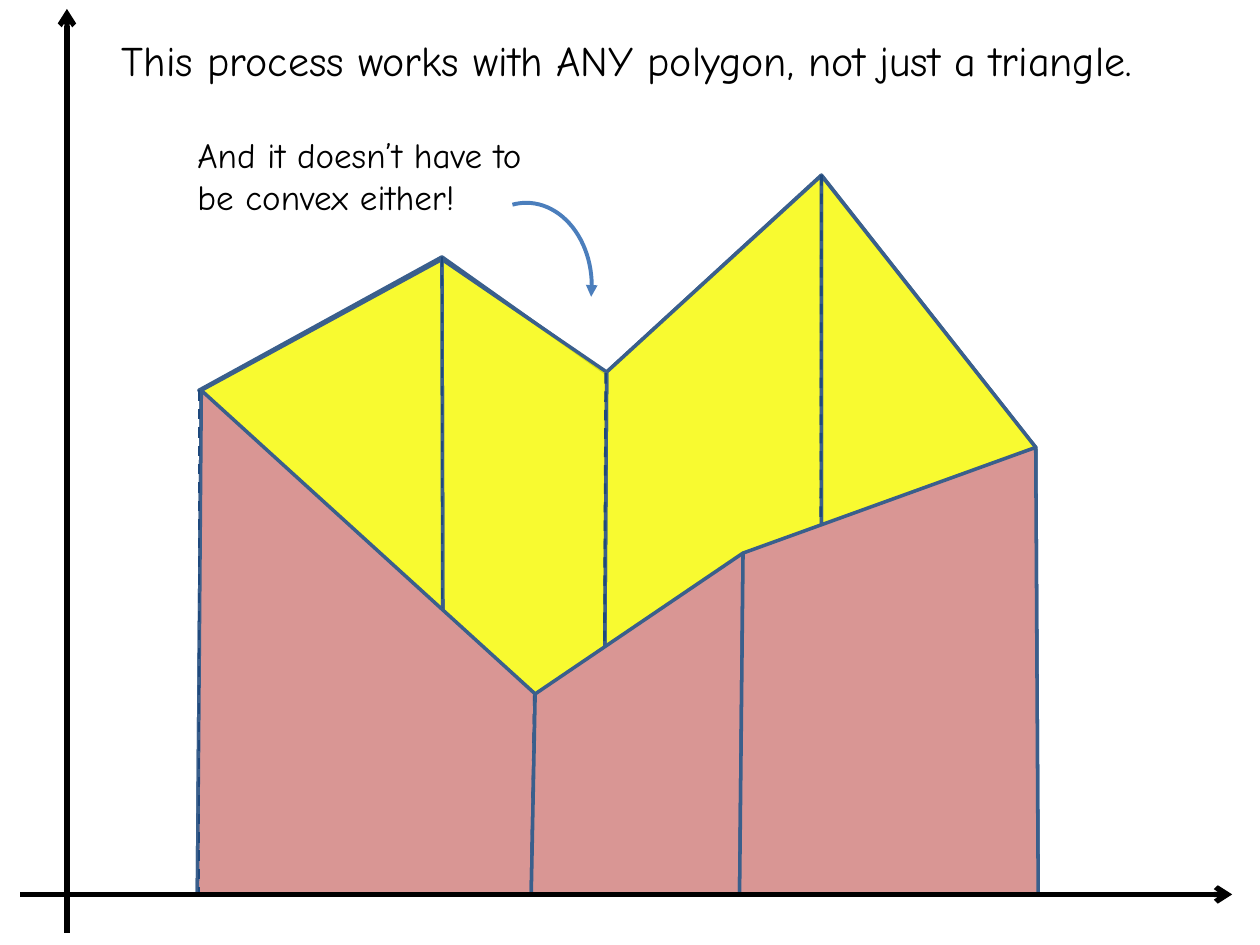
from dataclasses import dataclass
from lxml.etree import SubElement
from pptx import Presentation
from pptx.dml.color import RGBColor
from pptx.enum.dml import MSO_LINE
from pptx.enum.shapes import MSO_CONNECTOR, MSO_SHAPE
from pptx.enum.text import MSO_AUTO_SIZE
from pptx.oxml.ns import qn
from pptx.util import Cm, Pt


@dataclass(frozen=True)
class Theme:
    font: str = "Comic Neue"
    ink: str = "000000"
    edge: str = "3A5F8C"
    dash: str = "1F497D"
    arrow: str = "4B7EBC"
    polygon: str = "DCE6F2"
    upper: str = "FFFF00"
    lower: str = "D99694"
    upper_alpha: int = 80
    title_size: int = 24
    note_size: int = 20
    edge_width: float = 2
    dash_width: float = 1.5
    arrow_width: float = 2.25
    axis_width: float = 3


@dataclass(frozen=True)
class Box:
    left: float
    top: float
    width: float
    height: float

    def at(self, x, y):
        return Cm(self.left + x), Cm(self.top + y)

    def frame(self):
        return [Cm(v) for v in (self.left, self.top, self.width, self.height)]


@dataclass(frozen=True)
class Vertex:
    x: float
    y: float
    strip_x: float
    strip_y: float
    foot: float
    dash_foot: float


THEME = Theme()
VERTICES = {
    "A": Vertex(0, 4.34, 0.05, 4.34, -0.03, 0),
    "B": Vertex(4.9, 1.65, 4.9, 1.7, 4.93, 4.9),
    "C": Vertex(8.2, 3.99, 8.22, 3.97, 8.15, 8.15),
    "D": Vertex(12.55, 0, 12.55, 0.01, 12.55, 12.52),
    "E": Vertex(16.87, 5.49, 16.87, 5.49, 16.92, 16.87),
    "F": Vertex(10.92, 7.65, 10.97, 7.62, 10.9, 10.9),
    "G": Vertex(6.76, 10.49, 6.78, 10.46, 6.7, 6.7),
}


def set_values(obj, values):
    for name, value in values.items():
        setattr(obj, name, value)


def set_line(obj, color, width, dash=None, end=None):
    obj.line.color.rgb = RGBColor.from_string(color)
    set_values(obj.line, {"width": Pt(width), "dash_style": dash})
    if end:
        ln = obj.line._get_or_add_ln()
        SubElement(ln, qn("a:tailEnd"), type=end)


def add_line(shapes, start, stop, **line):
    c = shapes.add_connector(MSO_CONNECTOR.STRAIGHT, *start, *stop)
    set_line(c, **line)
    SubElement(c._element.spPr, qn("a:effectLst"))


def add_area(shapes, points, color, alpha=100):
    fb = shapes.build_freeform(*points[0], scale=1.0)
    fb.add_line_segments(points[1:], close=True)
    s = fb.convert_to_shape()
    s.fill.solid()
    s.fill.fore_color.rgb = RGBColor.from_string(color)
    if alpha < 100:
        clr = s._element.spPr.find(".//" + qn("a:srgbClr"))
        SubElement(clr, qn("a:alpha"), val=str(alpha * 1000))
    set_line(s, THEME.edge, THEME.edge_width)
    s.shadow.inherit = False


def add_text(shapes, box, text, size, wrap):
    tf = shapes.add_textbox(*box.frame()).text_frame
    set_values(tf, {"word_wrap": wrap, "auto_size": MSO_AUTO_SIZE.SHAPE_TO_FIT_TEXT})
    r = tf.paragraphs[0].add_run()
    r.text = text
    set_values(r.font, {"name": THEME.font, "size": Pt(size)})
    r.font.color.rgb = RGBColor.from_string(THEME.ink)


def add_plot(shapes, box):
    def strip(pair, color, alpha=100):
        a, b = (VERTICES[name] for name in pair)
        corners = [(a.foot, box.height), (a.strip_x, a.strip_y),
                   (b.strip_x, b.strip_y), (b.foot, box.height)]
        add_area(shapes, [box.at(*c) for c in corners], color, alpha)

    def drops(names):
        for v in (VERTICES[name] for name in names):
            add_line(shapes, box.at(v.x, v.y), box.at(v.dash_foot, box.height),
                     color=THEME.dash, width=THEME.dash_width, dash=MSO_LINE.DASH)

    add_area(shapes, [box.at(v.x, v.y) for v in VERTICES.values()], THEME.polygon)
    for pair in ("DE", "CD", "BC", "AB"):
        strip(pair, THEME.upper, THEME.upper_alpha)
    drops("CBD")
    strip("AG", THEME.lower)
    drops("AEFG")
    for pair in ("GF", "FE"):
        strip(pair, THEME.lower)


def add_axes(shapes, box, origin_x, origin_y):
    ends = (((0, origin_y), (box.width, origin_y)),
            ((origin_x, box.height), (origin_x, 0)))
    for start, stop in ends:
        add_line(shapes, box.at(*start), box.at(*stop),
                 color=THEME.ink, width=THEME.axis_width, end="arrow")


def add_callout(shapes, box):
    grp = shapes.add_group_shape().shapes
    note = Box(box.left, box.top, 7.72, 2.21)
    add_text(grp, note, "And it doesn’t have to be convex either!",
             THEME.note_size, True)
    arc = Box(box.left + 5.56, box.top + 1.52, box.width - 5.56, box.height - 1.52)
    s = grp.add_shape(MSO_SHAPE.ARC, *arc.frame())
    s.adjustments[0], s.adjustments[1] = 156.201, 5.715
    s.fill.background()
    set_line(s, THEME.arrow, THEME.arrow_width, end="triangle")
    s.shadow.inherit = False


def main():
    prs = Presentation()
    set_values(prs, {"slide_width": Cm(25.4), "slide_height": Cm(19.05)})
    shapes = prs.slides.add_slide(prs.slide_layouts[6]).shapes
    add_plot(shapes, Box(4.01, 3.53, 16.87, 14.5))
    add_axes(shapes, Box(0.41, 0.18, 24.43, 18.62), 0.94, 17.85)
    add_text(shapes, Box(2.21, 0.58, 23.29, 1.27),
             "This process works with ANY polygon, not just a triangle.",
             THEME.title_size, False)
    add_callout(shapes, Box(3.73, 2.57, 8.2, 4.87))
    prs.save("out.pptx")


if __name__ == "__main__":
    main()
